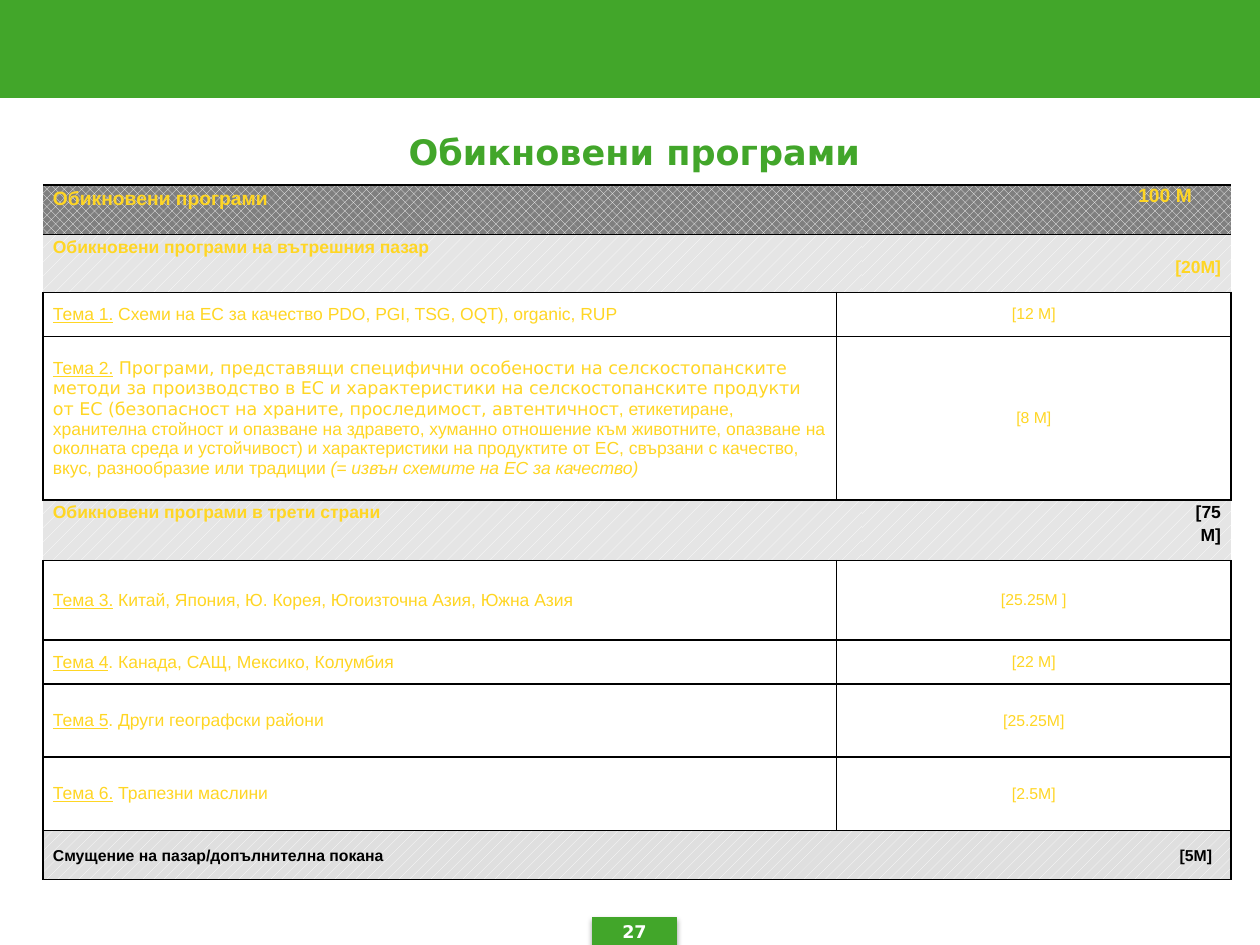
from lxml.etree import SubElement
from pptx import Presentation
from pptx.dml.color import RGBColor
from pptx.enum.dml import MSO_PATTERN
from pptx.enum.shapes import MSO_SHAPE
from pptx.enum.text import MSO_ANCHOR, PP_ALIGN
from pptx.oxml import parse_xml
from pptx.oxml.ns import nsdecls, qn
from pptx.util import Inches, Pt

GREEN = RGBColor(0x42, 0xA6, 0x2A)
YELLOW = RGBColor(0xFF, 0xD6, 0x24)
WHITE = RGBColor(0xFF, 0xFF, 0xFF)
BLACK = RGBColor(0, 0, 0)
DARK_GREY = RGBColor(0x7F, 0x7F, 0x7F)
PALE_GREY = RGBColor(0xE5, 0xE5, 0xE5)
MID_GREY = RGBColor(0xDF, 0xDF, 0xDF)

COLUMNS = [6.3, 0.16, 2.93]
ROWS = [0.39, 0.46, 0.35, 1.3, 0.48, 0.63, 0.35, 0.58, 0.58, 0.39]
HEADING = "Обикновени програми"

SECTIONS = {
    0: dict(label=HEADING, amount="100 M", size=11, back=DARK_GREY,
            pattern=MSO_PATTERN.PERCENT_50, color=YELLOW, right=0.31, top=0, spacing=1),
    1: dict(label="Обикновени програми на вътрешния пазар", amount="[20M]", size=10, back=PALE_GREY,
            pattern=MSO_PATTERN.PERCENT_10, color=YELLOW, right=0.08, top=0.16, spacing=1.15),
    4: dict(label="Обикновени програми в трети страни", amount="[75\vM]", size=10, back=PALE_GREY,
            pattern=MSO_PATTERN.PERCENT_10, color=BLACK, right=0.08, top=0, spacing=1.15),
}
THEMES = {
    2: ("Тема 1.", [(" Схеми на ЕС за качество PDO, PGI, TSG, OQT), organic, RUP", {})], "[12 M]"),
    3: ("Тема 2.", [
        (" Програми, представящи специфични особености на селскостопанските методи за производство "
         "в ЕС и характеристики на селскостопанските продукти от ЕС (безопасност на храните, "
         "проследимост, автентичност", {"name": "DejaVu Sans"}),
        (", етикетиране, хранителна стойност и опазване на здравето, хуманно отношение към животните, "
         "опазване на околната среда и устойчивост) и характеристики на продуктите от ЕС, свързани "
         "с качество, вкус, разнообразие или традиции ", {}),
        ("(= извън схемите на ЕС за качество)", {"italic": True}),
    ], "[8 M]"),
    5: ("Тема 3.", [(" Китай, Япония, Ю. Корея, Югоизточна Азия, Южна Азия", {})], "[25.25M ]"),
    6: ("Тема 4", [(". Канада, САЩ, Мексико, Колумбия", {})], "[22 M]"),
    7: ("Тема 5", [(". Други географски райони", {})], "[25.25M]"),
    8: ("Тема 6.", [(" Трапезни маслини", {})], "[2.5M]"),
}


def style_font(font, size, color, bold=False, name="Arial", italic=False, underline=False):
    """Set every font property used on the slide."""
    font.size, font.name, font.bold = Pt(size), name, bold
    font.italic, font.underline = italic, underline
    font.color.rgb = color


def write_cell(cell, runs, size, color, bold=False, align=PP_ALIGN.LEFT, spacing=1.0,
               anchor=MSO_ANCHOR.MIDDLE, right=0.08, top=0):
    """Fill a cell with one paragraph of (text, font options) runs."""
    cell.margin_left, cell.margin_right = Inches(0.08), Inches(right)
    cell.margin_top, cell.margin_bottom = Inches(top), 0
    cell.vertical_anchor = anchor
    paragraph = cell.text_frame.paragraphs[0]
    paragraph.text = "".join(text for text, _ in runs) if len(runs) == 1 else ""
    for text, _ in runs if len(runs) > 1 else []:
        paragraph.add_run().text = text
    paragraph.alignment, paragraph.line_spacing = align, spacing
    style_font(paragraph.font, size, color, bold)
    options = [option for _, option in runs] if len(runs) > 1 else [runs[0][1]] * len(paragraph.runs)
    for run, option in zip(paragraph.runs, options):
        style_font(run.font, size, color, bold, **option)
    return paragraph


def frame_cell(cell, sides):
    """Draw black borders on the given sides and none on the others."""
    properties = cell._tc.get_or_add_tcPr()
    for side in "LRTB":
        line = SubElement(properties, qn(f"a:ln{side}"), w=str(Pt(1)))
        if side in sides:
            SubElement(SubElement(line, qn("a:solidFill")), qn("a:srgbClr"), val=str(BLACK))
        else:
            SubElement(line, qn("a:noFill"))


def hatch(cell, pattern, back):
    """Give a cell a white pattern over a grey ground."""
    cell.fill.patterned()
    cell.fill.pattern = pattern
    cell.fill.fore_color.rgb, cell.fill.back_color.rgb = WHITE, back


def add_section_row(table, row, section):
    """Write a hatched section row with its total on the right."""
    label, amount = table.cell(row, 0), table.cell(row, 2)
    label.merge(table.cell(row, 1))
    write_cell(label, [(section["label"], {})], section["size"], YELLOW, True,
               spacing=1.15, anchor=MSO_ANCHOR.TOP)
    write_cell(amount, [(section["amount"], {})], section["size"], section["color"], True,
               PP_ALIGN.RIGHT, section["spacing"], MSO_ANCHOR.TOP, section["right"], section["top"])
    for cell in table.rows[row].cells:
        frame_cell(cell, "TB")
        hatch(cell, section["pattern"], section["back"])


def add_theme_row(table, row, theme, details, amount):
    """Write one theme with its budget."""
    table.cell(row, 1).merge(table.cell(row, 2))
    write_cell(table.cell(row, 0), [(theme, {"underline": True}), *details], 10, YELLOW)
    write_cell(table.cell(row, 1), [(amount, {})], 9, YELLOW, align=PP_ALIGN.CENTER)
    for cell in table.rows[row].cells:
        frame_cell(cell, "LRTB")
        cell.fill.background()


def add_reserve_row(table, row):
    """Write the closing row, its amount set by a right tab."""
    cell = table.cell(row, 0)
    cell.merge(table.cell(row, 2))
    paragraph = write_cell(cell, [("Смущение на пазар/допълнителна покана\t[5M]", {})],
                           9, BLACK, True, spacing=1.15)
    tabs = parse_xml(f'<a:tabLst {nsdecls("a")}><a:tab pos="{Inches(9.2)}" algn="r"/></a:tabLst>')
    paragraph._p.get_or_add_pPr().find(qn("a:defRPr")).addprevious(tabs)
    for part in table.rows[row].cells:
        frame_cell(part, "LRTB")
        hatch(part, MSO_PATTERN.PERCENT_20, MID_GREY)


def add_budget_table(slide, left, top):
    """Build the budget table from its section and theme rows."""
    frame = slide.shapes.add_table(len(ROWS), len(COLUMNS), left, top,
                                   Inches(sum(COLUMNS)), Inches(sum(ROWS)))
    table = frame.table
    table.first_row = table.horz_banding = False
    for column, width in zip(table.columns, COLUMNS):
        column.width = Inches(width)
    for row, height in zip(table.rows, ROWS):
        row.height = Inches(height)
    for row, section in SECTIONS.items():
        add_section_row(table, row, section)
    for row, theme in THEMES.items():
        add_theme_row(table, row, *theme)
    add_reserve_row(table, len(ROWS) - 1)


def add_green_box(slide, left, top, width, height):
    """Add a flat green rectangle."""
    box = slide.shapes.add_shape(MSO_SHAPE.RECTANGLE, left, top, width, height)
    box.shadow.inherit = False
    box.fill.solid()
    box.fill.fore_color.rgb = box.line.color.rgb = GREEN
    box.line.width = Pt(0.75)
    return box


def add_page_badge(slide, left, top, width, height):
    """Add the page number on a softly shadowed badge."""
    badge = add_green_box(slide, left, top, width, height)
    effects = badge._element.spPr.find(qn("a:effectLst"))
    shadow = SubElement(effects, qn("a:outerShdw"), blurRad=str(Pt(3.1)), dist=str(Pt(1.8)),
                        dir="5400000", rotWithShape="0")
    color = SubElement(shadow, qn("a:srgbClr"), val=str(BLACK))
    SubElement(color, qn("a:alpha"), val="35000")
    text_frame = badge.text_frame
    text_frame.margin_top = text_frame.margin_bottom = 0
    text_frame.vertical_anchor = MSO_ANCHOR.MIDDLE
    text_frame.text = "27"
    text_frame.paragraphs[0].alignment = PP_ALIGN.CENTER
    style_font(text_frame.paragraphs[0].runs[0].font, 10, WHITE, True, "DejaVu Sans")


def place_title(title, left, top, width, height):
    """Move and format the title placeholder."""
    title.left, title.top, title.width, title.height = left, top, width, height
    title.text_frame.text = HEADING
    title.text_frame.vertical_anchor = MSO_ANCHOR.MIDDLE
    paragraph = title.text_frame.paragraphs[0]
    paragraph.alignment = PP_ALIGN.CENTER
    style_font(paragraph.runs[0].font, 20, GREEN, True, "DejaVu Sans")


def main():
    """Build and save the slide."""
    presentation = Presentation()
    presentation.slide_width, presentation.slide_height = Inches(10), Inches(7.5)
    slide = presentation.slides.add_slide(presentation.slide_layouts[5])
    add_green_box(slide, 0, 0, presentation.slide_width, Inches(0.77))
    add_page_badge(slide, Inches(4.7), Inches(7.28), Inches(0.67), Inches(0.22))
    place_title(slide.shapes.title, Inches(0.34), Inches(0.86), Inches(9.39), Inches(0.68))
    add_budget_table(slide, Inches(0.34), Inches(1.47))
    presentation.save("out.pptx")


if __name__ == "__main__":
    main()
